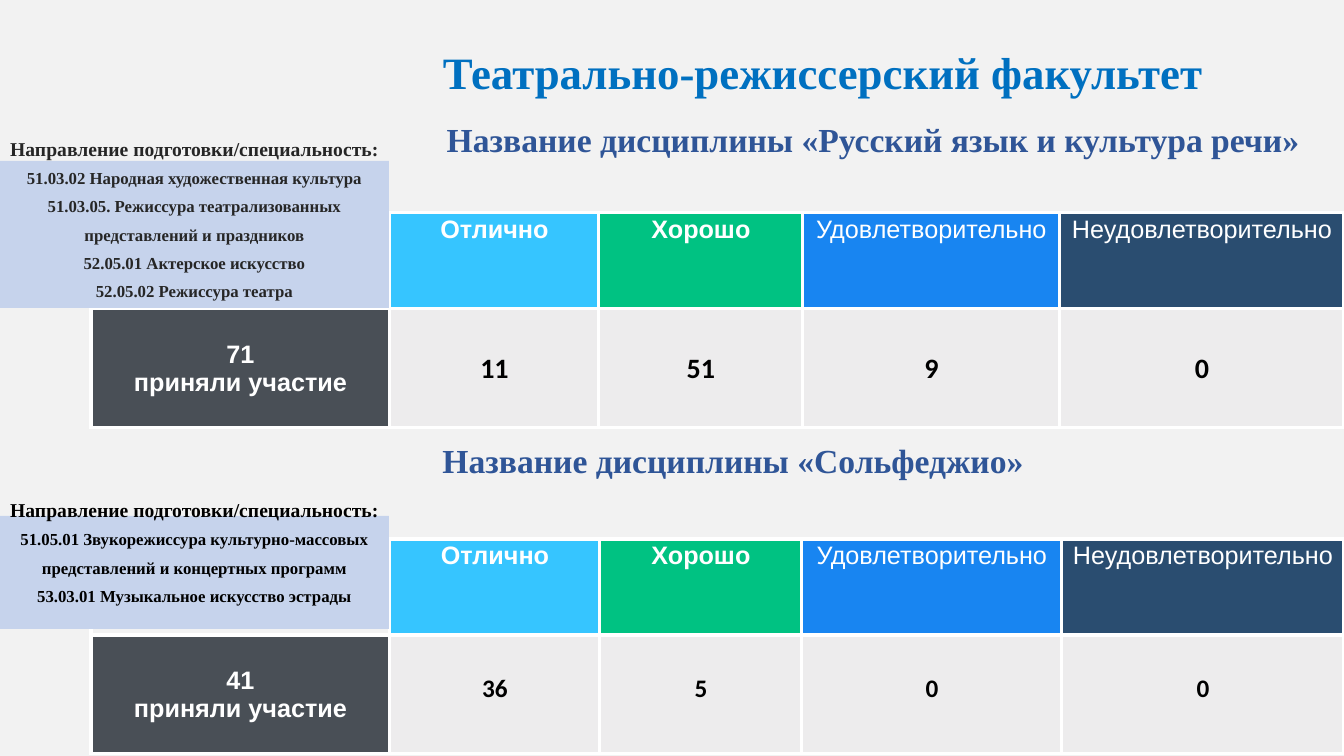
import pptx
import pptx.dml.color
import pptx.enum.shapes
import pptx.enum.text
import pptx.oxml
import pptx.oxml.ns
import pptx.util
from dataclasses import dataclass

PX = 914400 / 100.8
ANCHOR = pptx.enum.text.MSO_ANCHOR


@dataclass(frozen=True)
class Theme:
    background: str = "F2F2F2"
    title: str = "0070C0"
    discipline: str = "2F5597"
    panel: str = "C6D3EC"
    participants: str = "494F56"
    count_fill: str = "EDECED"
    white: str = "FFFFFF"
    black: str = "000000"
    serif: str = "Times New Roman"
    sans: str = "Arial"
    digits: str = "Calibri"
    title_size: int = 32
    discipline_size: int = 24
    label_size: int = 18
    lead_size: int = 14
    list_size: int = 12


THEME = Theme()
GRADES = [("Отлично", "36C5FF", True), ("Хорошо", "00C282", True),
          ("Удовлетворительно", "1885F1", False), ("Неудовлетворительно", "2A4D70", False)]
LEAD = "Направление подготовки/специальность:"
SECTIONS = [
    dict(discipline="Название дисциплины «Русский язык и культура речи»",
         discipline_box=(403, 113, 940, 47),
         programmes=["51.03.02 Народная художественная культура",
                     "51.03.05. Режиссура театрализованных представлений и праздников",
                     "52.05.01 Актерское искусство", "52.05.02 Режиссура театра"],
         list_box=(0, 127, 389, 261), list_color="262626", panel_box=(-2, 161, 391, 147),
         table_top=213, columns=[299, 209, 204, 257, 284],
         participants=71, counts=[11, 51, 9, 0], count_size=20, lift=0),
    dict(discipline="Название дисциплины «Сольфеджио»",
         discipline_box=(403, 434, 660, 47),
         programmes=["51.05.01 Звукорежиссура культурно-массовых представлений и концертных программ",
                     "53.03.01 Музыкальное искусство эстрады"],
         list_box=(-14, 488, 417, 175), list_color=THEME.black, panel_box=(-2, 516, 391, 113),
         table_top=539, columns=[299, 210, 202, 260, 282],
         participants=41, counts=[36, 5, 0, 0], count_size=18, lift=12),
]
ROWS = [96, 119]


def emu(*lengths):
    return [pptx.util.Emu(round(length * PX)) for length in lengths]


def write(frame, text, font, size, color, bold=True, spacing=1.0, margins=(0, 0, 0, 0),
          anchor=ANCHOR.TOP):
    """Fill a text frame or table cell with centred text in one format."""
    text_frame = getattr(frame, "text_frame", frame)
    text_frame.text = text
    frame.margin_left, frame.margin_top, frame.margin_right, frame.margin_bottom = emu(*margins)
    frame.vertical_anchor = anchor
    text_frame.word_wrap = True
    for paragraph in text_frame.paragraphs:
        paragraph.alignment = pptx.enum.text.PP_ALIGN.CENTER
        paragraph.line_spacing = spacing
        paragraph.space_before = paragraph.space_after = pptx.util.Pt(0)
        for run in paragraph.runs:
            run.font.name = font
            run.font.size = pptx.util.Pt(size)
            run.font.bold = bold
            run.font.color.rgb = pptx.dml.color.RGBColor.from_string(color)


presentation = pptx.Presentation()
presentation.slide_width, presentation.slide_height = emu(1344, 756)
slide = presentation.slides.add_slide(presentation.slide_layouts[3])
slide.background.fill.solid()
slide.background.fill.fore_color.rgb = pptx.dml.color.RGBColor.from_string(THEME.background)

title = slide.shapes.title
title.left, title.top, title.width, title.height = emu(303, 36, 1040, 80)
write(title.text_frame, "Театрально-режиссерский факультет", THEME.serif,
      THEME.title_size, THEME.title, spacing=1.16)
title.text_frame.auto_size = pptx.enum.text.MSO_AUTO_SIZE.NONE

for number, section in enumerate(SECTIONS, start=1):
    # Grades table
    grades = slide.shapes.add_table(
        2, 5, *emu(91, section["table_top"], sum(section["columns"]), sum(ROWS))).table
    grades.first_row = grades.horz_banding = False
    for column, width in zip(grades.columns, section["columns"]):
        column.width = emu(width)[0]
    for row, height in zip(grades.rows, ROWS):
        row.height = emu(height)[0]

    write(grades.cell(1, 0), f"{section['participants']}\nприняли участие", THEME.sans,
          THEME.label_size, THEME.white, margins=(7, 3, 7, 3), anchor=ANCHOR.MIDDLE)
    fills = {(1, 0): THEME.participants}
    for position, ((grade, color, bold), count) in enumerate(
            zip(GRADES, section["counts"]), start=1):
        write(grades.cell(0, position), grade, THEME.sans, THEME.label_size, THEME.white,
              bold=bold, margins=(7, 3, 7, 3))
        write(grades.cell(1, position), str(count), THEME.digits, section["count_size"],
              THEME.black, margins=(7, 7, 7, 7 + section["lift"]), anchor=ANCHOR.MIDDLE)
        fills[0, position] = color
        fills[1, position] = THEME.count_fill

    for index, cell in enumerate(grades.iter_cells()):
        properties = cell._tc.get_or_add_tcPr()
        for side in ("lnL", "lnR", "lnT", "lnB"):
            properties.append(pptx.oxml.parse_xml(
                f'<a:{side} {pptx.oxml.ns.nsdecls("a")} w="31242"><a:solidFill>'
                f'<a:srgbClr val="{THEME.white}"/></a:solidFill></a:{side}>'))
        color = fills.get(divmod(index, 5))
        if color:
            cell.fill.solid()
            cell.fill.fore_color.rgb = pptx.dml.color.RGBColor.from_string(color)
        else:
            cell.fill.background()

    # Programme list on its panel
    panel = slide.shapes.add_shape(
        pptx.enum.shapes.MSO_SHAPE.RECTANGLE, *emu(*section["panel_box"]))
    panel.shadow.inherit = False
    panel.fill.solid()
    panel.fill.fore_color.rgb = pptx.dml.color.RGBColor.from_string(THEME.panel)
    panel.line.fill.background()

    programmes = slide.placeholders[number]
    programmes.left, programmes.top, programmes.width, programmes.height = emu(*section["list_box"])
    write(programmes.text_frame, "\n".join([LEAD] + section["programmes"]), THEME.serif,
          THEME.list_size, section["list_color"], spacing=1.4)
    programmes.text_frame.auto_size = pptx.enum.text.MSO_AUTO_SIZE.NONE
    programmes.text_frame.paragraphs[0].runs[0].font.size = pptx.util.Pt(THEME.lead_size)
    for paragraph in programmes.text_frame.paragraphs:
        properties = paragraph._p.get_or_add_pPr()
        properties.set("marL", "0")
        properties.set("indent", "0")
        properties.append(pptx.oxml.parse_xml(f'<a:buNone {pptx.oxml.ns.nsdecls("a")}/>'))
    slide.shapes.element.append(programmes.element)  # bring in front of the panel

    discipline = slide.shapes.add_textbox(*emu(*section["discipline_box"]))
    write(discipline.text_frame, section["discipline"], THEME.serif,
          THEME.discipline_size, THEME.discipline, spacing=1.16)

presentation.save("out.pptx")
